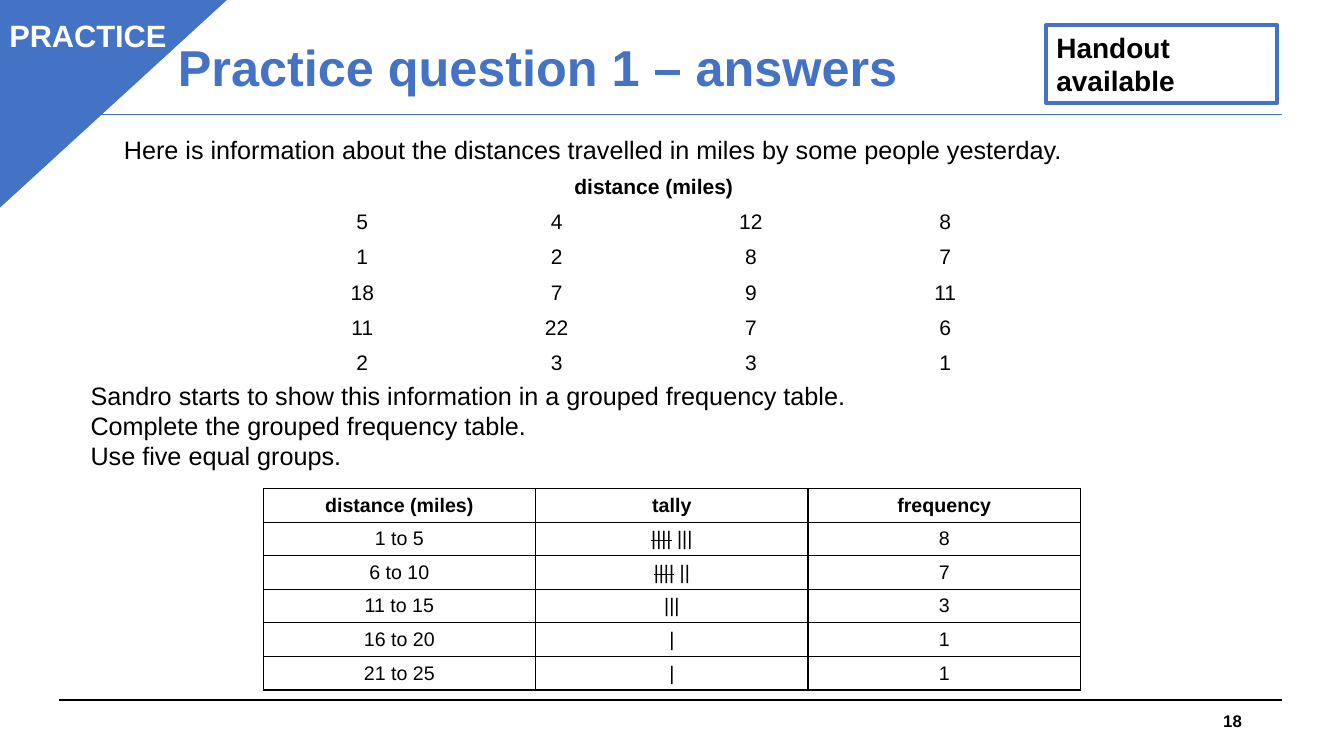
"""Build the answer slide for a grouped frequency table question."""
from dataclasses import dataclass

from lxml.etree import SubElement
from pptx import Presentation
from pptx.dml.color import RGBColor
from pptx.enum.shapes import MSO_CONNECTOR, MSO_SHAPE
from pptx.enum.text import MSO_ANCHOR as Anchor, MSO_AUTO_SIZE as AutoSize, PP_ALIGN as Align
from pptx.oxml.ns import qn
from pptx.util import Pt


@dataclass(frozen=True)
class Theme:
    font: str = "Arial"
    accent: RGBColor = RGBColor(0x44, 0x72, 0xC4)
    ink: RGBColor = RGBColor(0, 0, 0)
    paper: RGBColor = RGBColor(255, 255, 255)
    title: int = 36
    banner: int = 22
    handout: int = 20
    body: int = 18
    data: int = 15
    tally: int = 14
    number: int = 12


THEME = Theme()

DISTANCES = [
    ["5", "4", "12", "8"],
    ["1", "2", "8", "7"],
    ["18", "7", "9", "11"],
    ["11", "22", "7", "6"],
    ["2", "3", "3", "1"],
]
FREQUENCIES = [
    ["distance (miles)", "tally", "frequency"],
    ["1 to 5", ("||||", " |||"), "8"],
    ["6 to 10", ("||||", " ||"), "7"],
    ["11 to 15", "|||", "3"],
    ["16 to 20", "|", "1"],
    ["21 to 25", "|", "1"],
]
TASK = [
    "Sandro starts to show this information in a grouped frequency table.",
    "Complete the grouped frequency table.",
    "Use five equal groups.",
]


def set_all(target, values):
    """Set each named attribute of the target."""
    for name, value in values.items():
        setattr(target, name, value)


def format_font(font, size, color, bold):
    """Give a font the theme's typeface with a size, colour and weight."""
    set_all(font, {"name": THEME.font, "size": Pt(size), "bold": bold})
    font.color.rgb = color


def write(frame, lines, size, color=THEME.ink, bold=False, align=Align.LEFT, **frame_format):
    """Write one formatted paragraph for each line."""
    set_all(frame, {"word_wrap": True, "auto_size": AutoSize.NONE, **frame_format})
    for index, line in enumerate(lines):
        paragraph = frame.add_paragraph() if index else frame.paragraphs[0]
        paragraph.text = line
        paragraph.alignment = align
        for run in paragraph.runs:
            format_font(run.font, size, color, bold)


def add_text(slide, box, lines, size, **text_format):
    """Add a text box."""
    shape = slide.shapes.add_textbox(*map(Pt, box))
    write(shape.text_frame, lines, size, **text_format)


def add_title(slide, box, text):
    """Move the title placeholder and fill it."""
    title = slide.shapes.title
    set_all(title, dict(zip(("left", "top", "width", "height"), map(Pt, box))))
    write(title.text_frame, [text], THEME.title, THEME.accent, True, Align.CENTER,
          vertical_anchor=Anchor.MIDDLE)
    title.text_frame.paragraphs[0].line_spacing = 0.9


def add_rule(slide, top, color, width):
    """Add a horizontal rule between the slide margins."""
    rule = slide.shapes.add_connector(
        MSO_CONNECTOR.STRAIGHT, Pt(42.5), Pt(top), Pt(916), Pt(top))
    rule.line.color.rgb = color
    rule.line.width = Pt(width)
    SubElement(rule.element.spPr, qn("a:effectLst"))


def add_outlined(slide, kind, box, line_width):
    """Add an unfilled preset shape with an accent outline."""
    shape = slide.shapes.add_shape(kind, *map(Pt, box))
    shape.shadow.inherit = False
    shape.fill.background()
    shape.line.color.rgb = THEME.accent
    shape.line.width = Pt(line_width)
    return shape


def add_corner(slide, box):
    """Add the filled triangle in the top left corner."""
    corner = add_outlined(slide, MSO_SHAPE.ISOSCELES_TRIANGLE, box, 1)
    corner.adjustments[0] = 0
    corner.fill.solid()
    corner.fill.fore_color.rgb = THEME.accent
    corner.element.spPr.xfrm.set("flipV", "1")


def add_borders(cell):
    """Draw a thin line on every side of a cell."""
    properties = cell._tc.get_or_add_tcPr()
    for side in ("lnL", "lnR", "lnT", "lnB"):
        line = SubElement(properties, qn(f"a:{side}"), w=str(Pt(1)))
        fill = SubElement(line, qn("a:solidFill"))
        SubElement(fill, qn("a:srgbClr"), val=str(THEME.ink))


def fill_cell(cell, content, size, bold, bordered):
    """Write a cell, striking through the first part of a two-part tally."""
    parts = (content,) if isinstance(content, str) else content
    if bordered:
        add_borders(cell)
    cell.fill.solid()
    cell.fill.fore_color.rgb = THEME.paper
    cell.vertical_anchor = Anchor.MIDDLE
    paragraph = cell.text_frame.paragraphs[0]
    paragraph.alignment = Align.CENTER
    for part in parts:
        run = paragraph.add_run()
        run.text = part
        format_font(run.font, size, THEME.ink, bold)
    if len(parts) > 1:
        paragraph.runs[0].font._element.set("strike", "sngStrike")


def add_grid(slide, box, rows, size, bordered=False):
    """Add a table with a bold first row and return it."""
    frame = slide.shapes.add_table(len(rows), len(rows[0]), *map(Pt, box))
    table = frame.table
    set_all(table, {"first_row": False, "horz_banding": False})
    for row_index, row in enumerate(rows):
        for column_index, content in enumerate(row):
            fill_cell(table.cell(row_index, column_index), content, size,
                      row_index == 0, bordered)
    return table


def main():
    """Build and save the slide."""
    presentation = Presentation()
    set_all(presentation, {"slide_width": Pt(960), "slide_height": Pt(540)})
    slide = presentation.slides.add_slide(presentation.slide_layouts[5])

    add_rule(slide, 499.7, THEME.ink, 1.5)
    add_rule(slide, 82, THEME.accent, 0.75)
    add_title(slide, (53.3, 10, 671.8, 80), "Practice question 1 – answers ")
    add_corner(slide, (-2, -1.5, 165, 151))
    add_text(slide, (-2, 8.7, 129.6, 34), ["PRACTICE"], THEME.banner,
             color=THEME.paper, bold=True, align=Align.CENTER)
    handout = add_outlined(slide, MSO_SHAPE.RECTANGLE, (747.4, 18, 165, 55.5), 3)
    write(handout.text_frame, ["Handout\vavailable"], THEME.handout, bold=True,
          vertical_anchor=Anchor.TOP)
    add_text(slide, (678.2, 500.4, 216, 28.8), ["18"], THEME.number, bold=True,
             align=Align.RIGHT, vertical_anchor=Anchor.MIDDLE)

    add_text(slide, (81.4, 92.2, 717, 29), [
        "Here is information about the distances travelled in miles by some people yesterday."
    ], THEME.body, word_wrap=False)
    heading = ["distance (miles)", "", "", ""]
    distances = add_grid(slide, (189.4, 121, 555.2, 151.2), [heading, *DISTANCES], THEME.data)
    distances.cell(0, 0).merge(distances.cell(0, 3))
    add_text(slide, (57.6, 268, 769.7, 72.7), TASK, THEME.body)
    add_grid(slide, (188, 349, 583.8, 144), FREQUENCIES, THEME.tally, bordered=True)

    presentation.save("out.pptx")


if __name__ == "__main__":
    main()
